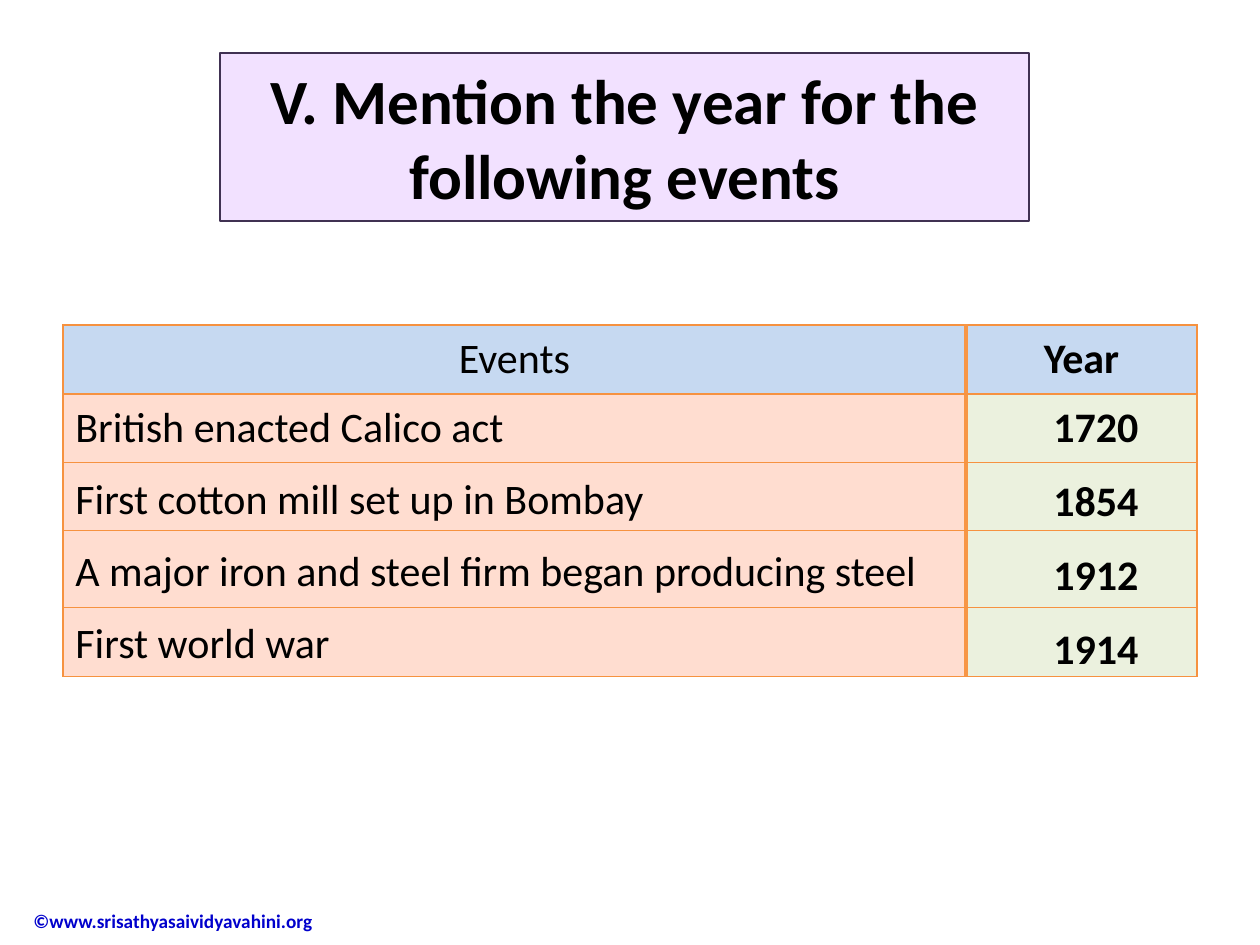
"""Build a slide that matches events in history to their years."""
import dataclasses

import lxml.etree
import pptx
import pptx.dml.color
import pptx.enum.text
import pptx.oxml.ns
import pptx.util

SCALE = 914400 / 126
FONT = "Calibri"
HUES = {
    "ink": "000000", "link": "0000CC", "lilac": "F2E1FF", "plum": "403152",
    "blue": "C6D9F1", "peach": "FFDDD0", "green": "EBF1DE",
    "edge": "F69240", "split": "F79646",
}
ALIGN = pptx.enum.text.PP_ALIGN
ANCHOR = pptx.enum.text.MSO_ANCHOR


@dataclasses.dataclass
class Event:
    name: str
    year: str
    width: int


@dataclasses.dataclass
class Box:
    left: int
    top: int
    width: int
    height: int

    def emu(self) -> list[int]:
        return [px(size) for size in dataclasses.astuple(self)]


EVENTS = [
    Event("British enacted Calico act", "1720", 525),
    Event("First cotton mill set up in Bombay", "1854", 627),
    Event("A major iron and steel firm began producing steel", "1912", 914),
    Event("First world war", "1914", 295),
]
COLS = [903, 231]
ROWS = [69, 69, 68, 77, 69]


def px(size: int) -> int:
    return round(size * SCALE)


def tint(name: str) -> pptx.dml.color.RGBColor:
    return pptx.dml.color.RGBColor.from_string(HUES[name])


def write(frame, text: str, size: int, bold: bool = False,
          hue: str = "ink", align=ALIGN.LEFT) -> None:
    frame.text = text
    line = frame.paragraphs[0]
    line.alignment = align
    font = line.runs[0].font
    font.name, font.size, font.bold = FONT, pptx.util.Pt(size), bold
    font.color.rgb = tint(hue)


def label(slide, box: Box, text: str, size: int, bold: bool = False,
          hue: str = "ink", wrap: bool = True) -> None:
    frame = slide.shapes.add_textbox(*box.emu()).text_frame
    frame.word_wrap = wrap
    frame.vertical_anchor = ANCHOR.MIDDLE
    write(frame, text, size, bold, hue)


def border(cell, side: str, hue: str, width: float) -> None:
    tag = pptx.oxml.ns.qn
    line = lxml.etree.SubElement(
        cell._tc.get_or_add_tcPr(), tag(f"a:ln{side}"),
        w=str(pptx.util.Pt(width)))
    fill = lxml.etree.SubElement(line, tag("a:solidFill"))
    lxml.etree.SubElement(fill, tag("a:srgbClr"), val=HUES[hue])


def paint(cell, hue: str, thick: str) -> None:
    for side in "LRTB":
        if side == thick:
            border(cell, side, "split", 2)
        else:
            border(cell, side, "edge", 0.75)
    cell.fill.solid()
    cell.fill.fore_color.rgb = tint(hue)


def draw_title(slide) -> None:
    title = slide.shapes.title
    title.left, title.top, title.width, title.height = Box(220, 53, 809, 168).emu()
    title.fill.solid()
    title.fill.fore_color.rgb = tint("lilac")
    title.line.color.rgb = tint("plum")
    title.line.width = pptx.util.Pt(0.75)
    write(title.text_frame, "V. Mention the year for the following events",
          36, True, align=ALIGN.CENTER)


def draw_table(slide) -> None:
    box = Box(63, 325, sum(COLS), sum(ROWS))
    table = slide.shapes.add_table(len(ROWS), len(COLS), *box.emu()).table
    table.first_row = table.horz_banding = False
    for col, width in zip(table.columns, COLS):
        col.width = px(width)
    for step, (row, height) in enumerate(zip(table.rows, ROWS)):
        row.height = px(height)
        for cell, hue, thick in zip(row.cells, ("peach", "green"), "RL"):
            paint(cell, hue if step else "blue", thick)
    for col, text in enumerate(("Events", "Year")):
        cell = table.cell(0, col)
        cell.margin_left = cell.margin_right = px(9)
        cell.margin_top = cell.margin_bottom = px(9)
        write(cell.text_frame, text, 24, col == 1, align=ALIGN.CENTER)


def draw_events(slide) -> None:
    for step, event in enumerate(EVENTS):
        label(slide, Box(63, 394 + 72 * step, event.width, 63), event.name, 24)
        label(slide, Box(1041, 394 + 74 * step, 111, 63), event.year, 24,
              True, wrap=False)


def main() -> None:
    deck = pptx.Presentation()
    deck.slide_width, deck.slide_height = px(1260), px(945)
    slide = deck.slides.add_slide(deck.slide_layouts[5])
    label(slide, Box(21, 895, 318, 52), "©www.srisathyasaividyavahini.org",
          11, True, "link")
    draw_table(slide)
    draw_events(slide)
    draw_title(slide)
    deck.save("out.pptx")


if __name__ == "__main__":
    main()
